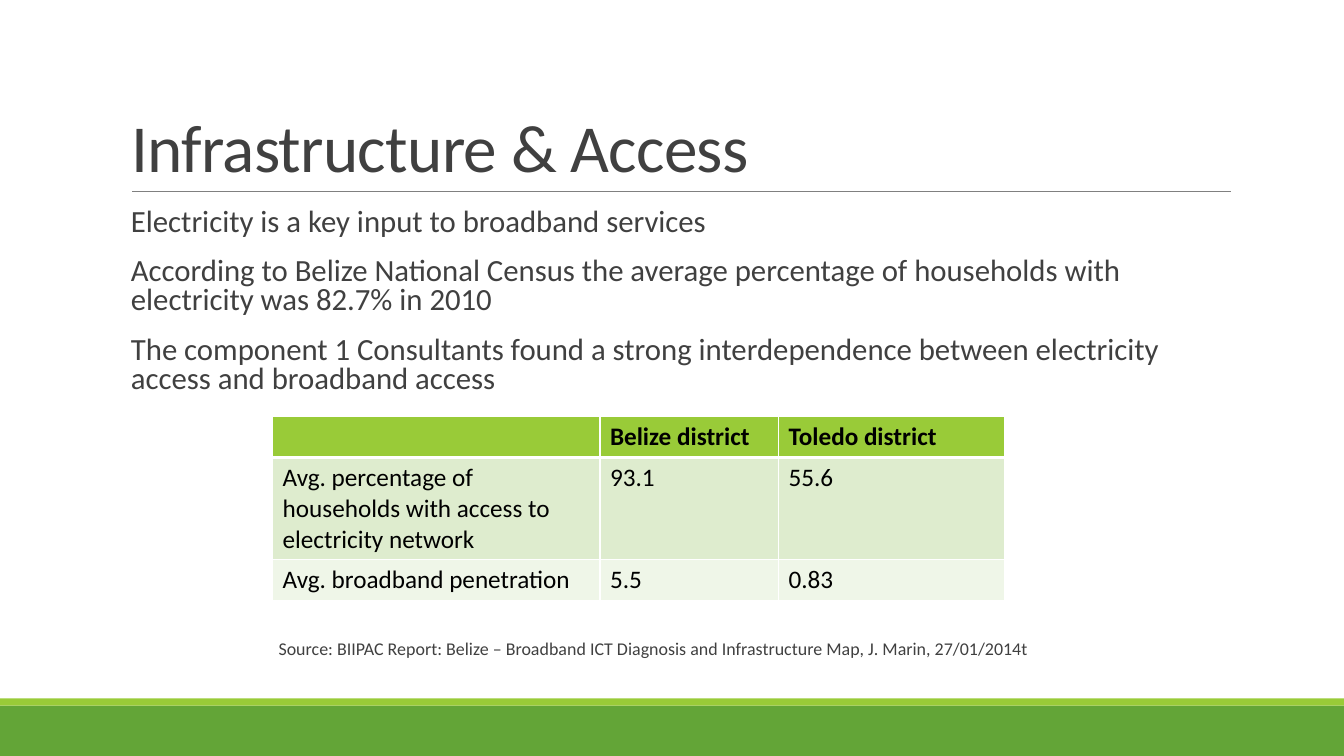
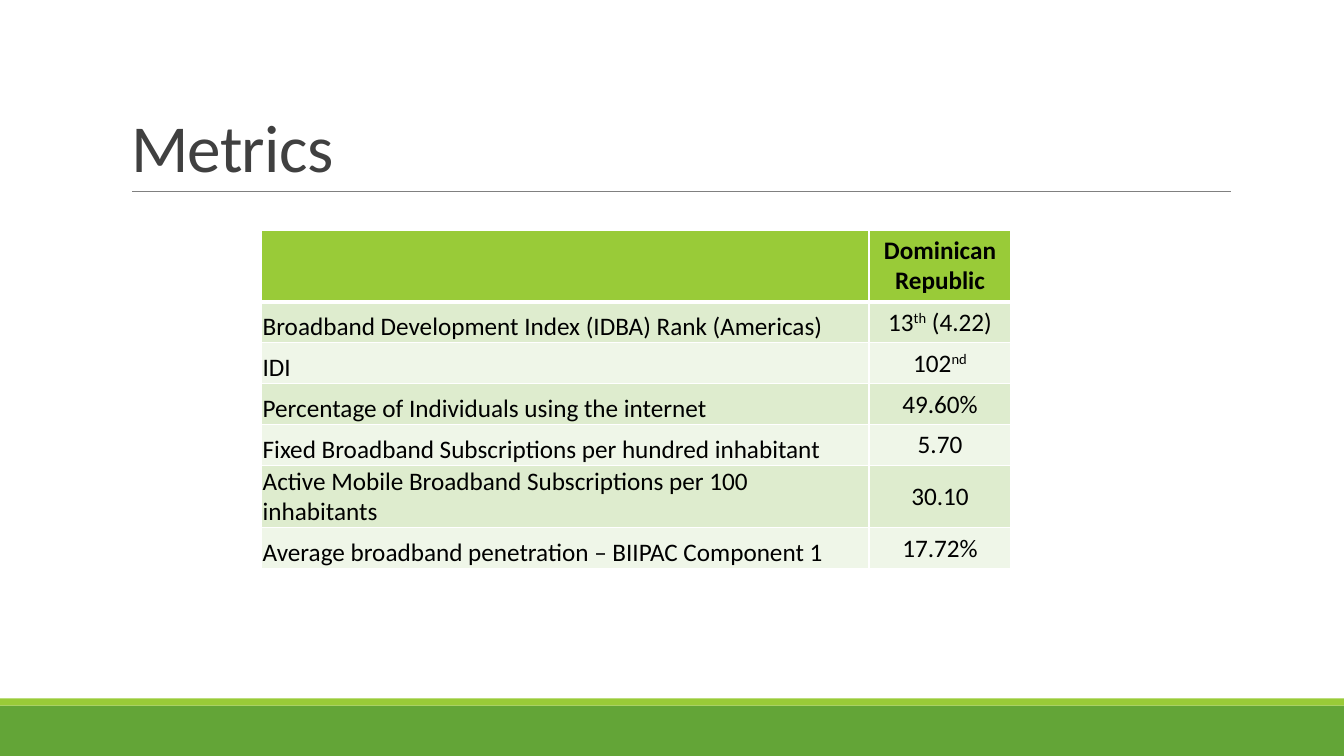
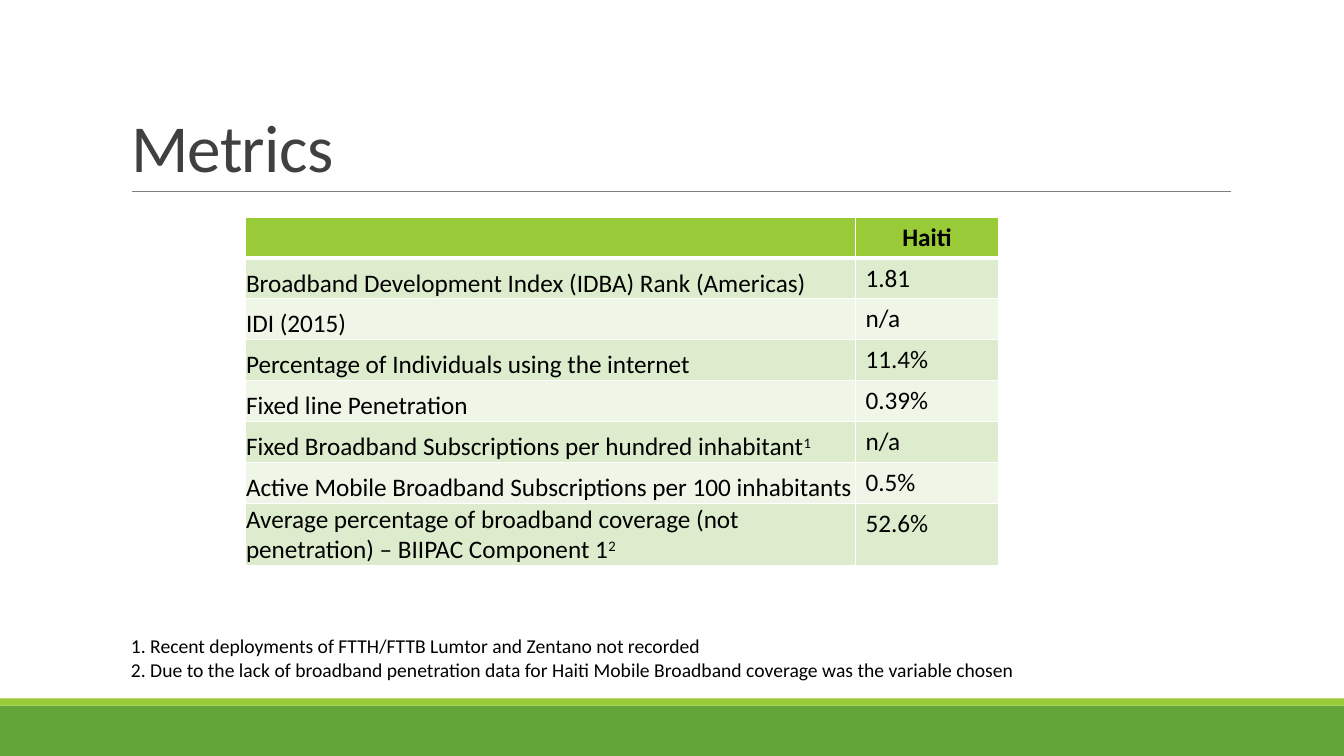
from lxml.etree import SubElement
from pptx import Presentation
from pptx.dml.color import RGBColor
from pptx.enum.shapes import MSO_CONNECTOR, MSO_SHAPE
from pptx.enum.text import MSO_ANCHOR as Anchor, MSO_AUTO_SIZE as AutoSize, PP_ALIGN as Align
from pptx.oxml.ns import qn
from pptx.util import Cm, Pt

FONT = "Calibri"
GREEN, LIME, GREY, INK = "63A537", "99CB38", "808080", "404040"
BLACK, WHITE = "000000", "FFFFFF"
BANDS = ["DEECCE", "EFF6E8"]
SLIDE_W, SLIDE_H = 33.87, 19.05
LEFT, WIDTH = 3.05, 27.94
ROW, TALL_ROW = 1.03, 1.55

TITLE = {"size": Pt(48), "color": INK}
BODY = {"size": Pt(22), "color": INK}
SOURCE = {"size": Pt(12.8), "color": INK}
NOTE = {"size": Pt(14), "color": BLACK}
HEAD = {"size": Pt(18), "color": BLACK, "bold": True}
CELL = {"size": Pt(18), "color": BLACK, "bold": False}

TIGHT = {"margin_left": Cm(0.02), "margin_right": Cm(0.02),
         "margin_top": Cm(0.02), "margin_bottom": Cm(0)}
LABEL = {**TIGHT, "vertical_anchor": Anchor.BOTTOM}
CENTRED = {**TIGHT, "vertical_anchor": Anchor.MIDDLE}


def rgb(value):
    return RGBColor.from_string(value)


def apply(target, values):
    for name, value in values.items():
        setattr(target, name, value)


def write(para, text, style, **layout):
    """Fill a paragraph; pieces between ^ marks are superscript."""
    apply(para, layout)
    for index, piece in enumerate(text.split("^")):
        if not piece:
            continue
        span = para.add_run()
        span.text = piece
        span.font.name = FONT
        apply(span.font, {key: value for key, value in style.items() if key != "color"})
        span.font.color.rgb = rgb(style["color"])
        if index % 2:
            span._r.get_or_add_rPr().set("baseline", "30000")


def add_text(page, box, lines, style, frame_format=None, **layout):
    frame = page.shapes.add_textbox(*map(Cm, box)).text_frame
    apply(frame, {"word_wrap": True, **(frame_format or {})})
    for index, line in enumerate(lines):
        para = frame.add_paragraph() if index else frame.paragraphs[0]
        write(para, line, style, **layout)


# Shared title, rule and bottom bands
def add_page(deck, title):
    page = deck.slides.add_slide(deck.slide_layouts[5])
    for top, height, color in [(17.78, 1.27, GREEN), (17.6, 0.18, LIME)]:
        band = page.shapes.add_shape(MSO_SHAPE.RECTANGLE, Cm(0), Cm(top),
                                     Cm(SLIDE_W), Cm(height))
        band.shadow.inherit = False
        band.fill.solid()
        band.fill.fore_color.rgb = rgb(color)
        band.line.fill.background()

    rule = page.shapes.add_connector(MSO_CONNECTOR.STRAIGHT, Cm(3.33), Cm(4.83),
                                     Cm(31.01), Cm(4.83))
    rule.line.color.rgb = rgb(GREY)
    rule.line.width = Pt(0.5)
    SubElement(rule._element.spPr, qn("a:effectLst"))

    heading = page.shapes.title
    apply(heading, {"left": Cm(LEFT), "top": Cm(0.78), "width": Cm(WIDTH), "height": Cm(4.04)})
    frame = heading.text_frame
    apply(frame, {"auto_size": AutoSize.NONE, "word_wrap": True,
                  "vertical_anchor": Anchor.BOTTOM})
    para = frame.paragraphs[0]
    write(para, title, TITLE, alignment=Align.LEFT, line_spacing=0.85)
    para.runs[0]._r.get_or_add_rPr().set("spc", "-50")
    return page


def set_borders(cell, top, bottom):
    properties = cell._tc.get_or_add_tcPr()
    for side, width in {"L": 1, "R": 1, "T": top, "B": bottom}.items():
        line = SubElement(properties, qn(f"a:ln{side}"), w=str(Pt(width)))
        fill = SubElement(line, qn("a:solidFill"))
        SubElement(fill, qn("a:srgbClr"), val=WHITE)


# Table with a lime header and banded rows
def add_data_table(page, left, top, widths, heights, rows,
                   column_formats=({}, {}, {}), head_align=Align.LEFT, value_align=Align.LEFT):
    table = page.shapes.add_table(len(rows), len(widths), Cm(left), Cm(top),
                                  Cm(sum(widths)), Cm(sum(heights))).table
    apply(table, {"first_row": False, "horz_banding": False})
    for column, width in zip(table.columns, widths):
        column.width = Cm(width)
    for r, (values, height) in enumerate(zip(rows, heights)):
        table.rows[r].height = Cm(height)
        for c, value in enumerate(values):
            cell = table.cell(r, c)
            set_borders(cell, 3 if r == 1 else 1, 1 if r else 3)
            cell.fill.solid()
            cell.fill.fore_color.rgb = rgb(BANDS[(r - 1) % 2] if r else LIME)
            if r:
                apply(cell, column_formats[c])
            align = head_align if r == 0 else value_align if c else Align.LEFT
            write(cell.text_frame.paragraphs[0], value, CELL if r else HEAD, alignment=align)


def infrastructure_page(deck):
    page = add_page(deck, "Infrastructure & Access")
    add_text(page, (LEFT, 5.13, WIDTH, 5.2), [
        "Electricity is a key input to broadband services",
        "According to Belize National Census the average percentage of households "
        "with electricity was 82.7% in 2010",
        "The component 1 Consultants found a strong interdependence between "
        "electricity access and broadband access",
    ], BODY, {"margin_right": Cm(0)}, line_spacing=0.8, space_before=Pt(12), space_after=Pt(2))
    add_data_table(page, 6.87, 10.5, [8.25, 4.5, 5.7], [ROW, 2.57, ROW], [
        ["", "Belize district", "Toledo district"],
        ["Avg. percentage of households with access to electricity network", "93.1", "55.6"],
        ["Avg. broadband penetration", "5.5", "0.83"],
    ])
    add_text(page, (6.77, 15.95, 20.5, 0.76), [
        "Source: BIIPAC Report: Belize – Broadband ICT Diagnosis and Infrastructure Map, "
        "J. Marin, 27/01/2014t",
    ], SOURCE, {"vertical_anchor": Anchor.MIDDLE})


def dominican_page(deck):
    page = add_page(deck, "Metrics")
    add_data_table(page, 6.6, 5.8, [15.3, 3.58], [1.8] + [ROW] * 4 + [TALL_ROW, ROW], [
        ["", "Dominican Republic"],
        ["Broadband Development Index (IDBA) Rank (Americas)", "13^th^ (4.22)"],
        ["IDI", "102^nd^"],
        ["Percentage of Individuals using the internet", "49.60%"],
        ["Fixed Broadband Subscriptions per hundred inhabitant", "5.70"],
        ["Active Mobile Broadband Subscriptions per 100 inhabitants", "30.10"],
        ["Average broadband penetration – BIIPAC Component 1", "17.72%"],
    ], (LABEL, CENTRED), Align.CENTER, Align.CENTER)


def haiti_page(deck):
    page = add_page(deck, "Metrics")
    add_data_table(page, 6.18, 5.47, [15.38, 3.6], [ROW] * 7 + [TALL_ROW], [
        ["", "Haiti"],
        ["Broadband Development Index (IDBA) Rank (Americas)", "1.81"],
        ["IDI (2015)", "n/a"],
        ["Percentage of Individuals using the internet", "11.4%"],
        ["Fixed line Penetration", "0.39%"],
        ["Fixed Broadband Subscriptions per hundred inhabitant^1^", "n/a"],
        ["Active Mobile Broadband Subscriptions per 100 inhabitants", "0.5%"],
        ["Average percentage of broadband coverage (not penetration) – BIIPAC Component 1^2^",
         "52.6%"],
    ], (LABEL, {}), Align.CENTER)
    add_text(page, (LEFT, 15.85, 26.57, 1.45), [
        "1. Recent deployments of FTTH/FTTB Lumtor and Zentano not recorded",
        "2. Due to the lack of broadband penetration data for Haiti Mobile Broadband "
        "coverage was the variable chosen",
    ], NOTE)


def main():
    deck = Presentation()
    apply(deck, {"slide_width": Cm(SLIDE_W), "slide_height": Cm(SLIDE_H)})
    for build in (infrastructure_page, dominican_page, haiti_page):
        build(deck)
    deck.save("out.pptx")


if __name__ == "__main__":
    main()
